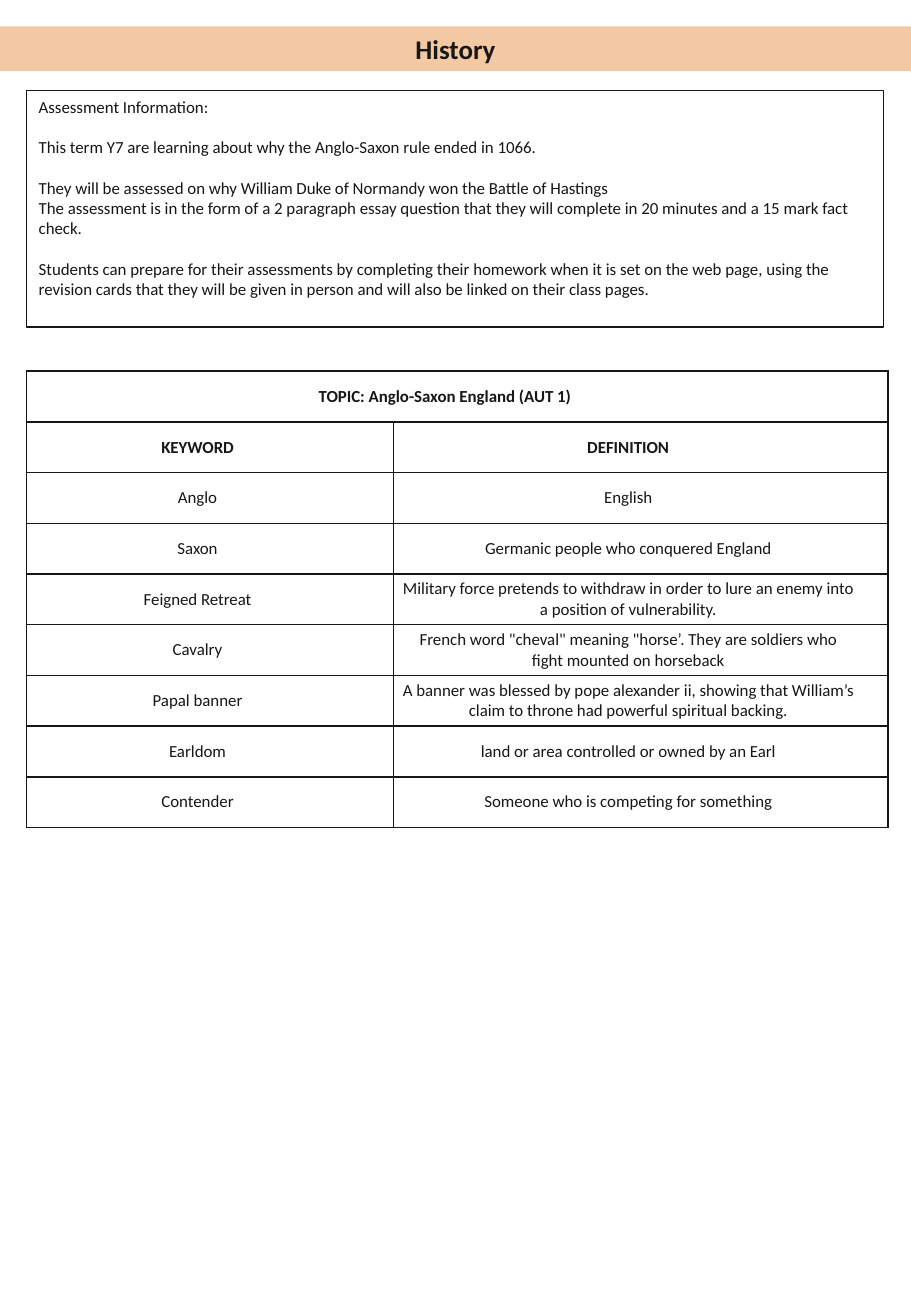
from dataclasses import dataclass

from lxml.etree import SubElement
from pptx import Presentation
from pptx.dml.color import RGBColor
from pptx.enum.shapes import MSO_SHAPE
from pptx.enum.text import MSO_ANCHOR, PP_ALIGN
from pptx.oxml.ns import qn
from pptx.slide import Slide
from pptx.table import _Cell
from pptx.text.text import TextFrame
from pptx.util import Cm, Pt

INK = RGBColor(0x18, 0x17, 0x17)
PEACH = RGBColor(0xF3, 0xC9, 0xA4)
FONT = "Calibri"
LEFT = Cm(0.56)
ROW_HEIGHT = Cm(1.06)
COLUMN_WIDTHS = (Cm(7.67), Cm(10.34))


@dataclass
class Keyword:
    term: str
    definition: str
    bold: bool = False


@dataclass
class Note:
    text: str
    gap_before: float = 12


NOTES = [
    Note("Assessment Information:", 0),
    Note("This term Y7 are learning about why the Anglo-Saxon rule ended in 1066."),
    Note("They will be assessed on why William Duke of Normandy won the Battle of Hastings"),
    Note("The assessment is in the form of a 2 paragraph essay question that they will "
         "complete in 20 minutes and a 15 mark fact check.", 0),
    Note("Students can prepare for their assessments by completing their homework when it "
         "is set on the web page, using the revision cards that they will be given in "
         "person and will also be linked on their class pages."),
]

KEYWORDS = [
    Keyword("KEYWORD", "DEFINITION", bold=True),
    Keyword("Anglo", "English"),
    Keyword("Saxon", "Germanic people who conquered England"),
    Keyword("Feigned Retreat", "Military force pretends to withdraw in order to lure an "
            "enemy into a position of vulnerability."),
    Keyword("Cavalry", "French word \"cheval\" meaning \"horse’. They are soldiers who "
            "fight mounted on horseback"),
    Keyword("Papal banner", "A banner was blessed by pope alexander ii, showing that "
            "William’s claim to throne had powerful spiritual backing."),
    Keyword("Earldom", "land or area controlled or owned by an Earl"),
    Keyword("Contender", "Someone who is competing for something"),
]


def write(frame: TextFrame, text: str, *, size: float = 10, bold: bool = False,
          align: PP_ALIGN = PP_ALIGN.LEFT, before: float = 0, after: float = 0) -> None:
    """Fill the first paragraph if it is free, otherwise add one."""
    first = frame.paragraphs[0]
    paragraph = frame.add_paragraph() if first.runs else first
    paragraph.alignment = align
    if before:
        paragraph.space_before = Pt(before)
    if after:
        paragraph.space_after = Pt(after)
    run = paragraph.add_run()
    run.text = text
    run.font.name = FONT
    run.font.size = Pt(size)
    run.font.bold = bold
    run.font.color.rgb = INK


def draw_border(cell: _Cell) -> None:
    properties = cell._tc.get_or_add_tcPr()
    for side in ("lnL", "lnR", "lnT", "lnB"):
        edge = SubElement(properties, qn(f"a:{side}"), w=str(Pt(1)))
        fill = SubElement(edge, qn("a:solidFill"))
        SubElement(fill, qn("a:srgbClr"), val=str(INK))


def write_cell(cell: _Cell, text: str, bold: bool) -> None:
    cell.vertical_anchor = MSO_ANCHOR.MIDDLE
    cell.margin_left, cell.margin_right = Cm(0.19), Cm(0.72)
    cell.margin_top = cell.margin_bottom = 0
    write(cell.text_frame, text, bold=bold, align=PP_ALIGN.CENTER, after=6)


def draw_heading(slide: Slide, width: int) -> None:
    band = slide.shapes.add_shape(MSO_SHAPE.RECTANGLE, 0, Cm(0.55), width, Cm(0.94))
    band.shadow.inherit = False
    band.fill.solid()
    band.fill.fore_color.rgb = PEACH
    band.line.fill.background()
    band.text_frame.vertical_anchor = MSO_ANCHOR.MIDDLE
    write(band.text_frame, "History", size=16, bold=True, align=PP_ALIGN.CENTER)


def draw_assessment(slide: Slide) -> None:
    assessment = slide.shapes.add_textbox(LEFT, Cm(1.89), Cm(17.91), Cm(4.95))
    assessment.line.color.rgb = INK
    assessment.line.width = Pt(0.75)
    assessment.text_frame.word_wrap = True
    for note in NOTES:
        write(assessment.text_frame, note.text, before=note.gap_before)


def draw_glossary(slide: Slide) -> None:
    row_count = len(KEYWORDS) + 1
    glossary = slide.shapes.add_table(row_count, 2, LEFT, Cm(7.76), sum(COLUMN_WIDTHS),
                                      ROW_HEIGHT * row_count).table
    glossary.first_row = glossary.horz_banding = False
    for column, width in zip(glossary.columns, COLUMN_WIDTHS):
        column.width = width
    for row in glossary.rows:
        row.height = ROW_HEIGHT
        for cell in row.cells:
            draw_border(cell)
            cell.fill.background()

    # Topic row across both columns, then the keywords
    topic = glossary.cell(0, 0)
    topic.merge(glossary.cell(0, 1))
    write_cell(topic, "TOPIC: Anglo-Saxon England (AUT 1)", bold=True)
    for index, keyword in enumerate(KEYWORDS, start=1):
        write_cell(glossary.cell(index, 0), keyword.term, keyword.bold)
        write_cell(glossary.cell(index, 1), keyword.definition, keyword.bold)


def main() -> None:
    presentation = Presentation()
    presentation.slide_width = Cm(19.05)
    presentation.slide_height = Cm(27.51)
    slide = presentation.slides.add_slide(presentation.slide_layouts[6])
    draw_heading(slide, presentation.slide_width)
    draw_assessment(slide)
    draw_glossary(slide)
    presentation.save("out.pptx")


if __name__ == "__main__":
    main()
